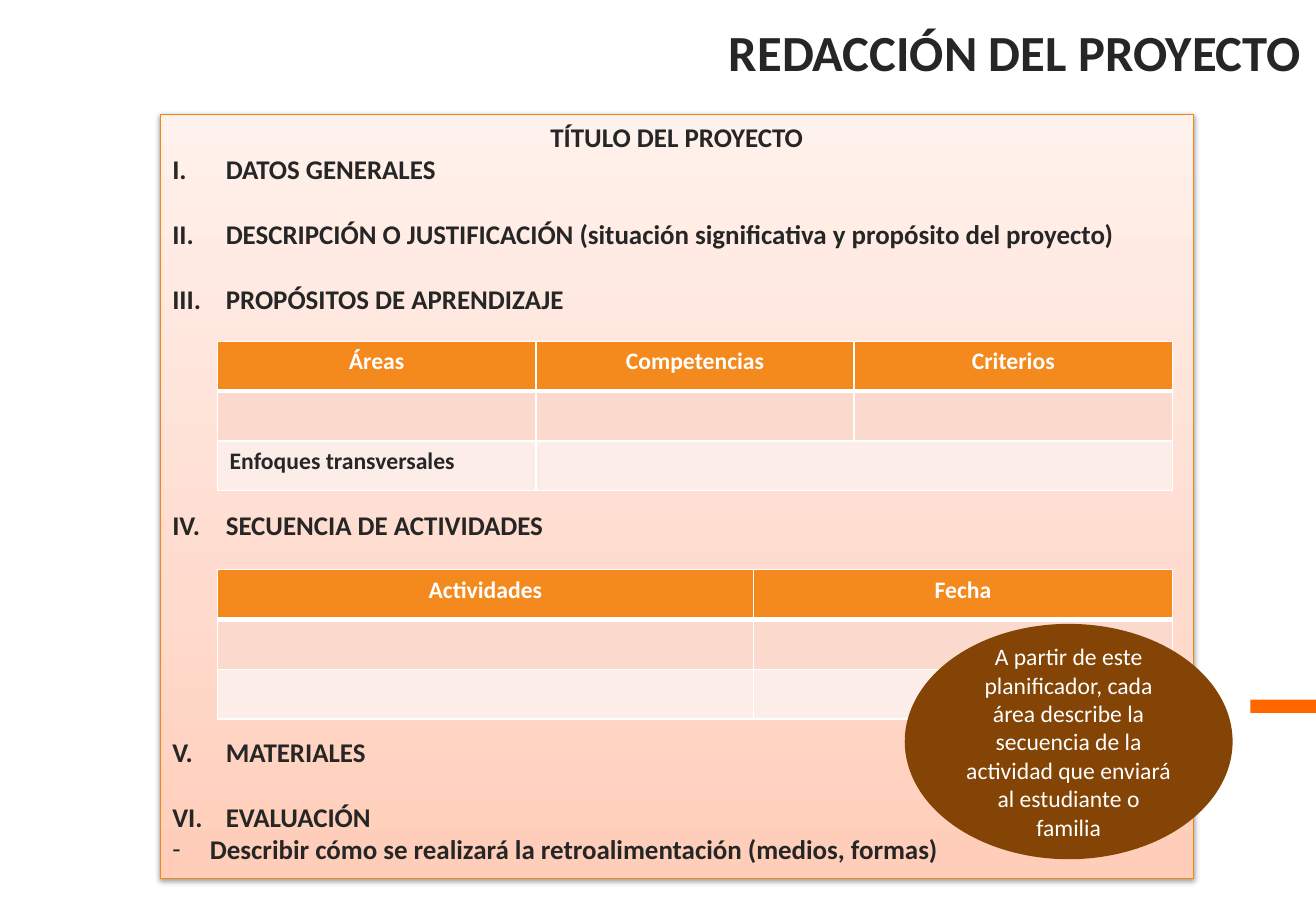
from lxml import etree
from pptx import Presentation
from pptx.dml.color import RGBColor
from pptx.enum.shapes import MSO_SHAPE
from pptx.enum.text import MSO_ANCHOR, PP_ALIGN
from pptx.oxml.ns import qn
from pptx.util import Inches, Pt

LEFT, CENTER, RIGHT = PP_ALIGN.LEFT, PP_ALIGN.CENTER, PP_ALIGN.RIGHT
TOP, MIDDLE = MSO_ANCHOR.TOP, MSO_ANCHOR.MIDDLE
RECTANGLE, OVAL = MSO_SHAPE.RECTANGLE, MSO_SHAPE.OVAL

# Content
TITLE = "REDACCIÓN DEL PROYECTO"
PLAN_TITLE = "TÍTULO DEL PROYECTO"
# Text and number of free lines above it
SECTIONS = [
    ("DATOS GENERALES", 0),
    ("DESCRIPCIÓN O JUSTIFICACIÓN (situación significativa y propósito del proyecto)", 1),
    ("PROPÓSITOS DE APRENDIZAJE", 1),
    ("SECUENCIA DE ACTIVIDADES", 6),
    ("MATERIALES", 6),
    ("EVALUACIÓN", 1),
]
EVALUATION_NOTE = "Describir cómo se realizará la retroalimentación (medios, formas)"
TABLES = [
    {"top": 2.81, "widths": [2.62, 2.62, 2.62],
     "rows": [["Áreas", "Competencias", "Criterios"], ["", "", ""],
              ["Enfoques transversales", "", ""]],
     "merge": ((2, 1), (2, 2))},
    {"top": 4.69, "widths": [4.41, 3.45],
     "rows": [["Actividades", "Fecha"], ["", ""], ["", ""]],
     "merge": None},
]
CALLOUT = ("A partir de este planificador, cada área describe la secuencia de la "
           "actividad que enviará al estudiante o familia")

# Formats
DARK, WHITE, BROWN, BAR = "262626", "FFFFFF", "834406", "FF6600"
ROW_FILLS = ["F4891E", "FBDACD", "FDEDE8"]
PANEL_STOPS = [(0, "FFCDB8"), (35, "FFDBCD"), (100, "FFF1EC")]
TITLE_FONT = {"name": "Calibri", "size": Pt(30), "bold": True}
PLAN_FONT = {"name": "Calibri", "size": Pt(16), "bold": True}
TABLE_FONT = {"name": "Calibri", "size": Pt(14), "bold": True}
CALLOUT_FONT = {"name": "Calibri", "size": Pt(14), "bold": False}
LINE_HEIGHT = 19.2
TABLE_LEFT, ROW_HEIGHT = 1.79, 0.41


def color(value):
    return RGBColor.from_string(value)


def add_element(parent, tag, **attributes):
    values = {name: str(value) for name, value in attributes.items()}
    return etree.SubElement(parent, qn(tag), values)


def write(paragraph, text, font, font_color, alignment=LEFT):
    paragraph.alignment = alignment
    run = paragraph.add_run()
    run.text = text
    for name, value in font.items():
        setattr(run.font, name, value)
    run.font.color.rgb = color(font_color)


def add_box(slide, kind, left, top, width, height, fill=None, line=None, weight=1):
    shape = slide.shapes.add_shape(
        kind, Inches(left), Inches(top), Inches(width), Inches(height))
    shape.shadow.inherit = False
    if fill:
        shape.fill.solid()
        shape.fill.fore_color.rgb = color(fill)
    if line:
        shape.line.color.rgb = color(line)
        shape.line.width = Pt(weight)
    else:
        shape.line.fill.background()
    shape.text_frame.word_wrap = True
    return shape


def shade_panel(panel):
    panel.fill.gradient()
    panel.fill.gradient_angle = 90
    properties = panel._element.spPr
    stops = properties.find(".//" + qn("a:gsLst"))
    for stop in list(stops):
        stops.remove(stop)
    for position, value in PANEL_STOPS:
        stop = add_element(stops, "a:gs", pos=position * 1000)
        add_element(stop, "a:srgbClr", val=value)
    shadow = add_element(properties.find(qn("a:effectLst")), "a:outerShdw",
                         blurRad=Pt(3.1), dist=Pt(1.6), dir=5400000, rotWithShape=0)
    shadow_color = add_element(shadow, "a:srgbClr", val="000000")
    add_element(shadow_color, "a:alpha", val=38000)


def add_item(frame, text, indent, bullet, free_lines=0):
    paragraph = frame.add_paragraph()
    properties = paragraph._p.get_or_add_pPr()
    properties.set("marL", str(Inches(indent)))
    properties.set("indent", str(-Inches(indent)))
    add_element(properties, "a:buFont", typeface="Calibri")
    if bullet:
        add_element(properties, "a:buChar", char=bullet)
    else:
        add_element(properties, "a:buAutoNum", type="romanUcPeriod")
    paragraph.space_before = Pt(free_lines * LINE_HEIGHT)
    write(paragraph, text, PLAN_FONT, DARK)


def add_borders(cell, row):
    properties = cell._tc.get_or_add_tcPr()
    weights = {"a:lnL": 1, "a:lnR": 1,
               "a:lnT": 3 if row == 1 else 1, "a:lnB": 3 if row == 0 else 1}
    for tag, weight in weights.items():
        border = add_element(properties, tag, w=Pt(weight))
        add_element(add_element(border, "a:solidFill"), "a:srgbClr", val=WHITE)


def add_plan_table(slide, top, widths, rows, merge):
    table = slide.shapes.add_table(
        len(rows), len(widths), Inches(TABLE_LEFT), Inches(top),
        Inches(sum(widths)), Inches(ROW_HEIGHT * len(rows))).table
    for column, width in zip(table.columns, widths):
        column.width = Inches(width)
    for row, texts in enumerate(rows):
        for column, text in enumerate(texts):
            cell = table.cell(row, column)
            add_borders(cell, row)
            cell.fill.solid()
            cell.fill.fore_color.rgb = color(ROW_FILLS[row])
            if text:
                header = row == 0
                write(cell.text_frame.paragraphs[0], text, TABLE_FONT,
                      WHITE if header else DARK, CENTER if header else LEFT)
    if merge:
        first, last = merge
        table.cell(*first).merge(table.cell(*last))


def main():
    presentation = Presentation()
    presentation.slide_width = Inches(10.83)
    presentation.slide_height = Inches(7.5)
    slide = presentation.slides.add_slide(presentation.slide_layouts[5])

    # Side bar and title
    add_box(slide, RECTANGLE, 10.29, 5.76, 0.54, 0.11, BAR)
    title = slide.shapes.title
    title.left, title.top = Inches(3.24), Inches(0)
    title.width, title.height = Inches(7.57), Inches(0.84)
    title.text_frame.vertical_anchor = MIDDLE
    write(title.text_frame.paragraphs[0], TITLE, TITLE_FONT, DARK, RIGHT)

    # Plan panel
    panel = add_box(slide, RECTANGLE, 1.32, 0.94, 8.5, 6.29, line="F48618", weight=0.75)
    shade_panel(panel)
    frame = panel.text_frame
    frame.vertical_anchor = TOP
    write(frame.paragraphs[0], PLAN_TITLE, PLAN_FONT, DARK, CENTER)
    for text, free_lines in SECTIONS:
        add_item(frame, text, 0.44, None, free_lines)
    add_item(frame, EVALUATION_NOTE, 0.31, "-")

    # Tables inside the panel
    for table in TABLES:
        add_plan_table(slide, **table)

    # Callout
    callout = add_box(slide, OVAL, 7.46, 5.15, 2.67, 1.91, BROWN, BROWN, 2)
    callout.text_frame.vertical_anchor = MIDDLE
    write(callout.text_frame.paragraphs[0], CALLOUT, CALLOUT_FONT, WHITE, CENTER)

    presentation.save("out.pptx")


if __name__ == "__main__":
    main()
